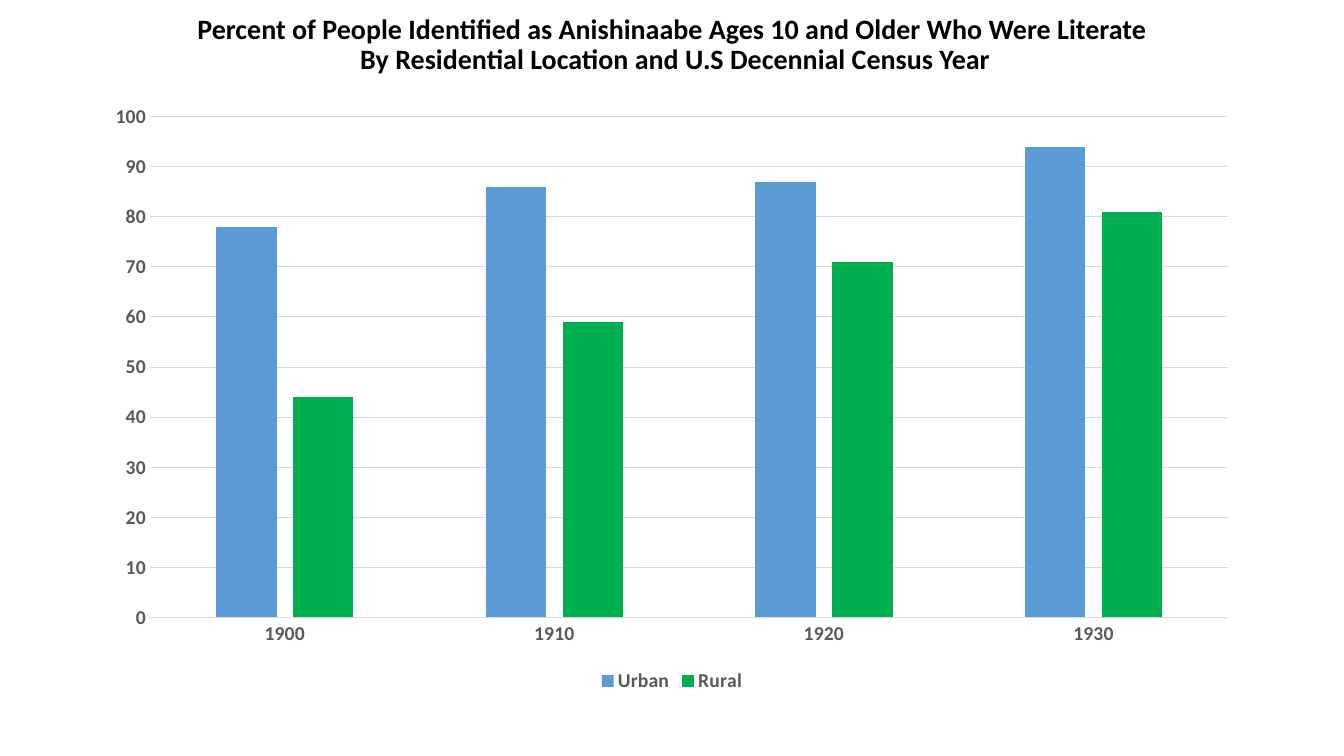
from dataclasses import dataclass

from pptx import Presentation
from pptx.chart.data import CategoryChartData
from pptx.dml.color import RGBColor
from pptx.enum.chart import XL_CHART_TYPE, XL_LEGEND_POSITION, XL_TICK_MARK
from pptx.enum.text import MSO_ANCHOR, PP_ALIGN
from pptx.util import Cm, Pt


@dataclass(frozen=True)
class Theme:
    font: str = "Calibri"
    title_color: RGBColor = RGBColor(0x00, 0x00, 0x00)
    label_color: RGBColor = RGBColor(0x59, 0x59, 0x59)
    line_color: RGBColor = RGBColor(0xD9, 0xD9, 0xD9)
    urban_color: RGBColor = RGBColor(0x5B, 0x9B, 0xD5)
    rural_color: RGBColor = RGBColor(0x00, 0xB0, 0x50)
    title_size: Pt = Pt(20)
    label_size: Pt = Pt(14)
    line_width: Pt = Pt(0.75)


THEME = Theme()
LEFT, WIDTH = Cm(2.33), Cm(29.21)
TITLE_LINES = (
    "Percent of People Identified as Anishinaabe Ages 10 and Older Who Were Literate",
    " By Residential Location and U.S Decennial Census Year",
)
CENSUS_YEARS = ("1900", "1910", "1920", "1930")
LITERACY = (
    ("Urban", (78, 86, 87, 94), THEME.urban_color),
    ("Rural", (44, 59, 71, 81), THEME.rural_color),
)


def style_font(font, size, color):
    font.name = THEME.font
    font.size = size
    font.bold = True
    font.color.rgb = color


def style_line(line):
    line.color.rgb = THEME.line_color
    line.width = THEME.line_width


def add_title(slide):
    box = slide.shapes.add_textbox(LEFT, Cm(0.25), WIDTH, Cm(1.8))
    frame = box.text_frame
    frame.word_wrap = True
    frame.vertical_anchor = MSO_ANCHOR.MIDDLE
    frame.text = "\n".join(TITLE_LINES)
    for para in frame.paragraphs:
        para.alignment = PP_ALIGN.CENTER
        para.line_spacing = 0.9
        for span in para.runs:
            style_font(span.font, THEME.title_size, THEME.title_color)


def style_axes(chart):
    years, percent = chart.category_axis, chart.value_axis
    for axis in (years, percent):
        axis.major_tick_mark = XL_TICK_MARK.NONE
        axis.minor_tick_mark = XL_TICK_MARK.NONE
        style_font(axis.tick_labels.font, THEME.label_size, THEME.label_color)
    style_line(years.format.line)
    percent.format.line.fill.background()
    percent.minimum_scale = 0
    percent.maximum_scale = 100
    percent.major_unit = 10
    percent.has_major_gridlines = True
    style_line(percent.major_gridlines.format.line)


def add_literacy_chart(slide):
    data = CategoryChartData(number_format="0")
    data.categories = CENSUS_YEARS
    for name, values, _ in LITERACY:
        data.add_series(name, values)
    chart = slide.shapes.add_chart(
        XL_CHART_TYPE.COLUMN_CLUSTERED, LEFT, Cm(2.33), WIDTH, Cm(15.24), data
    ).chart
    chart.has_title = False
    chart.font.name = THEME.font
    style_axes(chart)

    plot = chart.plots[0]
    plot.vary_by_categories = False
    plot.gap_width = 219
    plot.overlap = -27
    for series, (_, _, color) in zip(plot.series, LITERACY):
        series.format.fill.solid()
        series.format.fill.fore_color.rgb = color

    chart.has_legend = True
    chart.legend.position = XL_LEGEND_POSITION.BOTTOM
    chart.legend.include_in_layout = False
    style_font(chart.legend.font, THEME.label_size, THEME.label_color)


def main():
    deck = Presentation()
    deck.slide_width, deck.slide_height = Cm(33.87), Cm(19.05)
    slide = deck.slides.add_slide(deck.slide_layouts[6])
    add_literacy_chart(slide)
    add_title(slide)
    deck.save("out.pptx")


if __name__ == "__main__":
    main()
